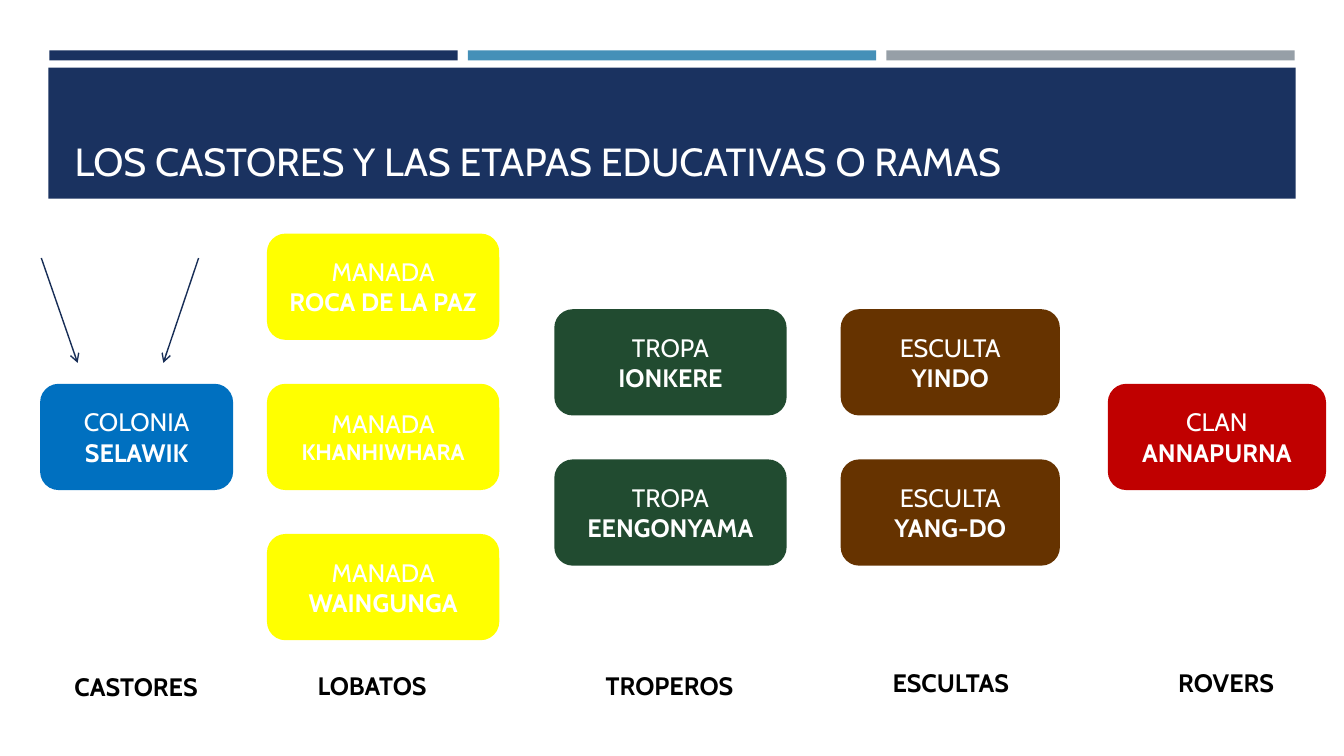
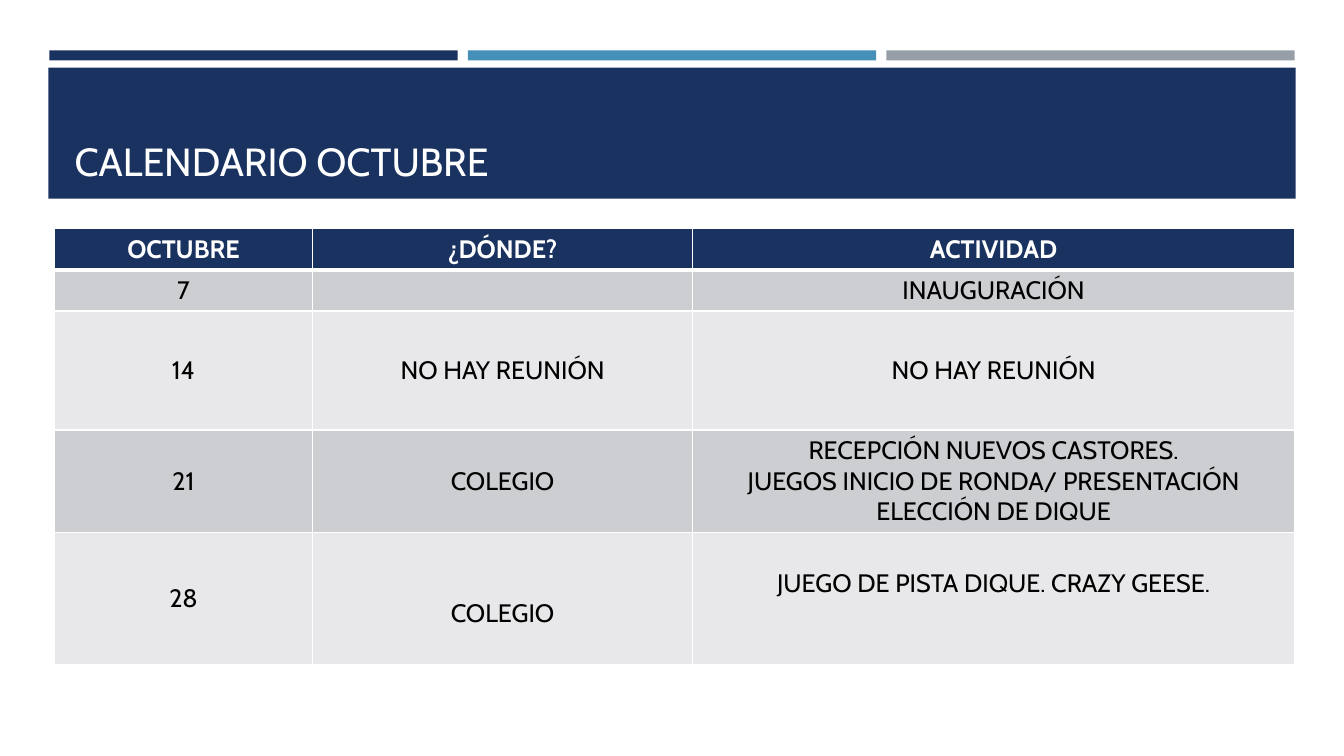
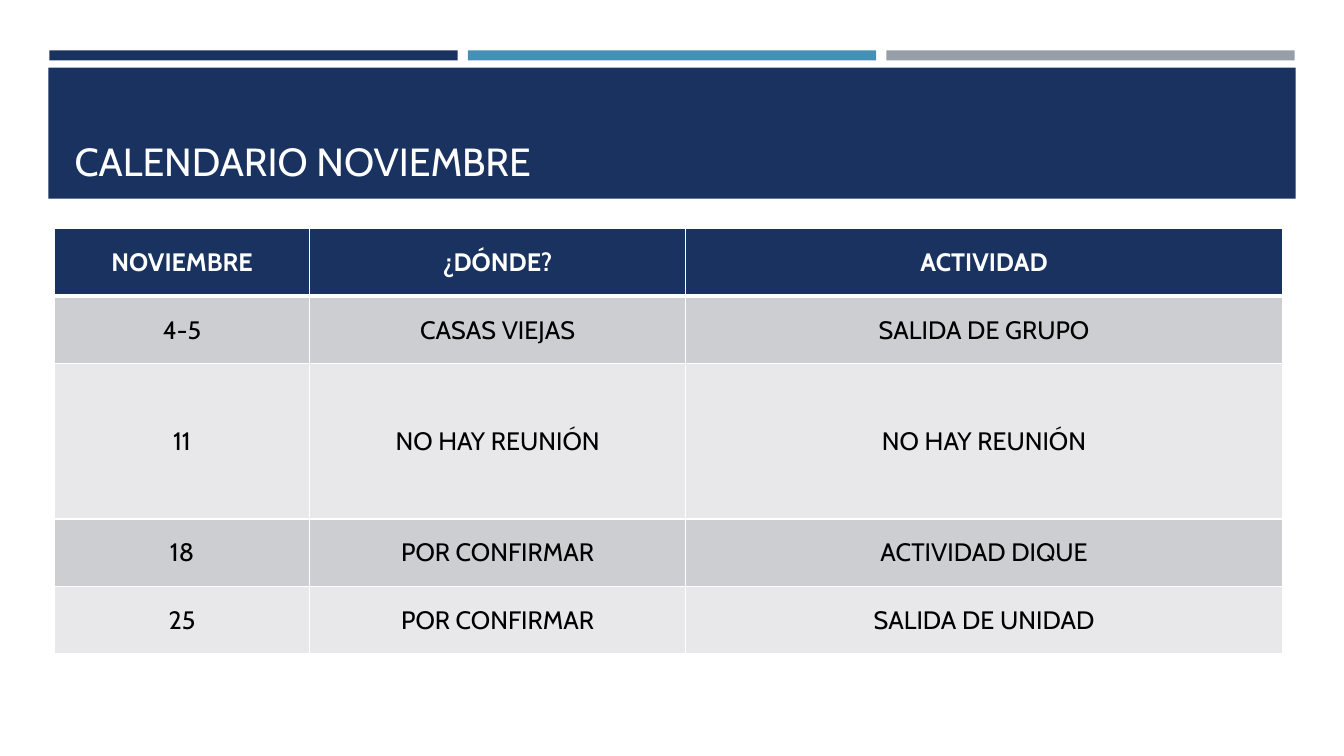
from lxml import etree
from pptx import Presentation
from pptx.dml.color import RGBColor
from pptx.enum.shapes import MSO_CONNECTOR, MSO_SHAPE
from pptx.enum.text import MSO_ANCHOR, MSO_AUTO_SIZE, PP_ALIGN
from pptx.oxml.ns import qn
from pptx.util import Pt

RECT = MSO_SHAPE.RECTANGLE
ROUNDED = MSO_SHAPE.ROUNDED_RECTANGLE
STRAIGHT = MSO_CONNECTOR.STRAIGHT
MIDDLE, BOTTOM = MSO_ANCHOR.MIDDLE, MSO_ANCHOR.BOTTOM
NO_AUTOFIT = MSO_AUTO_SIZE.NONE
LEFT, CENTER = PP_ALIGN.LEFT, PP_ALIGN.CENTER

EMU_PER_PX = 9144  # 100 px to the inch
TITLE_ONLY = 5
FONT = "Cabin"
NAVY, BLUE, GRAY = "1A3260", "4590B8", "969FA7"
ARROW_NAVY = "172D56"
WHITE, BLACK = "FFFFFF", "000000"
ROW_FILLS = ("CDCED2", "E8E8EA")

BOX_HEIGHT, BOX_PITCH, MIDDLE_BOX_TOP = 103, 149, 382
LABEL_WIDTH, LABEL_HEIGHT = 234, 40
NAME_SIZES = {"KHANHIWHARA": 16}

# stage, label left, label top, box left, box width, colour, unit, unit names
STAGES = [
    ("CASTORES", 18, 661, 41, 189, "0070C0", "COLONIA", ["SELAWIK"]),
    ("LOBATOS", 252, 660, 266, 228, "FFFF00", "MANADA",
     ["ROCA DE LA PAZ", "KHANHIWHARA", "WAINGUNGA"]),
    ("TROPEROS", 547, 660, 551, 228, "214B30", "TROPA",
     ["IONKERE", "EENGONYAMA"]),
    ("ESCULTAS", 826, 657, 835, 215, "663300", "ESCULTA",
     ["YINDO", "YANG-DO"]),
    ("ROVERS", 1099, 657, 1100, 214, "C00000", "CLAN", ["ANNAPURNA"]),
]

OCTOBER = [
    ("OCTUBRE", "¿DÓNDE?", "ACTIVIDAD"),
    ("7", "", "INAUGURACIÓN"),
    ("14", "NO HAY REUNIÓN", "NO HAY REUNIÓN"),
    ("21", "COLEGIO", "RECEPCIÓN NUEVOS CASTORES.\n"
     "JUEGOS INICIO DE RONDA/ PRESENTACIÓN\nELECCIÓN DE DIQUE"),
    ("28", "COLEGIO", "JUEGO DE PISTA DIQUE. CRAZY GEESE."),
]
NOVEMBER = [
    ("NOVIEMBRE", "¿DÓNDE?", "ACTIVIDAD"),
    ("4-5", "CASAS VIEJAS", "SALIDA DE GRUPO"),
    ("11", "NO HAY REUNIÓN", "NO HAY REUNIÓN"),
    ("18", "POR CONFIRMAR", "ACTIVIDAD DIQUE"),
    ("25", "POR CONFIRMAR", "SALIDA DE UNIDAD"),
]


def px(*lengths):
    return [length * EMU_PER_PX for length in lengths]


def rgb(color):
    return RGBColor.from_string(color)


def style(paragraph, color, size=18, bold=False, align=CENTER):
    paragraph.alignment = align
    font = paragraph.font
    font.name, font.size, font.bold = FONT, Pt(size), bold
    font.color.rgb = rgb(color)


def add_block(slide, preset, box, color):
    block = slide.shapes.add_shape(preset, *px(*box))
    block.shadow.inherit = False
    block.fill.solid()
    block.fill.fore_color.rgb = rgb(color)
    block.line.fill.background()
    return block


def add_layout_bands(layout, slide):
    """Draw the header bands and move them to the shared layout."""
    for placeholder in list(layout.placeholders):
        if placeholder.placeholder_format.idx != 0:
            layout.shapes.element.remove(placeholder.element)
    bands = [add_block(slide, RECT, (49 + 415 * i, 50, 405, 10), color)
             for i, color in enumerate((NAVY, BLUE, GRAY))]
    bands.append(add_block(slide, RECT, (48, 67, 1237, 130), NAVY))
    for band in bands:
        layout.shapes.element.insert(2, band.element)


def add_titled_slide(prs, text):
    slide = prs.slides.add_slide(prs.slide_layouts[TITLE_ONLY])
    title = slide.shapes.title
    title.left, title.top, title.width, title.height = px(64, 77, 1206, 111)
    frame = title.text_frame
    frame.text = text
    frame.vertical_anchor = BOTTOM
    frame.auto_size = NO_AUTOFIT
    style(frame.paragraphs[0], WHITE, 28, align=LEFT)
    return slide


def add_unit_box(slide, box, color, unit, name):
    block = add_block(slide, ROUNDED, box, color)
    block.line.color.rgb = rgb(color)
    block.line.width = Pt(1.75)
    frame = block.text_frame
    frame.vertical_anchor = MIDDLE
    frame.text = f"{unit}\n{name}"
    style(frame.paragraphs[0], WHITE)
    style(frame.paragraphs[1], WHITE, NAME_SIZES.get(name, 18), bold=True)


def add_label(slide, left, top, text):
    label = slide.shapes.add_textbox(
        *px(left, top, LABEL_WIDTH, LABEL_HEIGHT))
    label.text_frame.word_wrap = True
    label.text_frame.text = text
    style(label.text_frame.paragraphs[0], BLACK, bold=True)


def add_arrow(slide, start, end):
    arrow = slide.shapes.add_connector(STRAIGHT, *px(*start, *end))
    arrow.line.color.rgb = rgb(ARROW_NAVY)
    arrow.line.width = Pt(1)
    line = arrow.line._get_or_add_ln()
    etree.SubElement(line, qn("a:tailEnd"), type="arrow")
    etree.SubElement(arrow.element.spPr, qn("a:effectLst"))


def add_stage(slide, stage):
    label, label_left, label_top, left, width, color, unit, names = stage
    first_top = MIDDLE_BOX_TOP - (len(names) - 1) * BOX_PITCH // 2
    for i, name in enumerate(names):
        box = (left, first_top + i * BOX_PITCH, width, BOX_HEIGHT)
        add_unit_box(slide, box, color, unit, name)
    add_label(slide, label_left, label_top, label)


def set_borders(cell, top, bottom):
    """Give a cell white borders; top and bottom are widths in points."""
    properties = cell._tc.get_or_add_tcPr()
    for side, width in (("L", 1), ("R", 1), ("T", top), ("B", bottom)):
        line = etree.SubElement(properties, qn(f"a:ln{side}"),
                                w=str(Pt(width)))
        fill = etree.SubElement(line, qn("a:solidFill"))
        etree.SubElement(fill, qn("a:srgbClr"), val=WHITE)


def fill_cell(cell, row, text):
    is_header = row == 0
    set_borders(cell, 3 if row == 1 else 1, 3 if is_header else 1)
    cell.fill.solid()
    cell.fill.fore_color.rgb = rgb(
        NAVY if is_header else ROW_FILLS[(row - 1) % 2])
    cell.vertical_anchor = MIDDLE
    cell.text = text
    for paragraph in cell.text_frame.paragraphs:
        style(paragraph, WHITE if is_header else BLACK, bold=is_header)


def add_calendar(slide, rows, widths, heights):
    frame = slide.shapes.add_table(
        len(rows), len(widths),
        *px(54, 227, sum(widths), sum(heights)))
    calendar = frame.table
    calendar.horz_banding = False
    for column, width in zip(calendar.columns, px(*widths)):
        column.width = width
    for row, height in zip(calendar.rows, px(*heights)):
        row.height = height
    for r, texts in enumerate(rows):
        for c, text in enumerate(texts):
            fill_cell(calendar.cell(r, c), r, text)
    return calendar


def main():
    prs = Presentation()
    prs.slide_width, prs.slide_height = px(1333, 750)

    stages = add_titled_slide(
        prs, "LOS CASTORES Y LAS ETAPAS EDUCATIVAS O RAMAS")
    add_layout_bands(prs.slide_layouts[TITLE_ONLY], stages)
    for stage in STAGES:
        add_stage(stages, stage)
    add_arrow(stages, (41, 256), (77, 360))
    add_arrow(stages, (197, 256), (162, 360))

    october = add_titled_slide(prs, "CALENDARIO OCTUBRE")
    calendar = add_calendar(october, OCTOBER, (256, 377, 597),
                            (40, 41, 118, 101, 131))
    # The last place sits half a line low, the last activity half a line high
    calendar.cell(4, 1).margin_top, = px(35)
    calendar.cell(4, 2).margin_bottom, = px(35)

    november = add_titled_slide(prs, "CALENDARIO NOVIEMBRE")
    add_calendar(november, NOVEMBER, (253, 373, 592), (67, 67, 154, 67, 67))

    prs.save("out.pptx")


if __name__ == "__main__":
    main()
